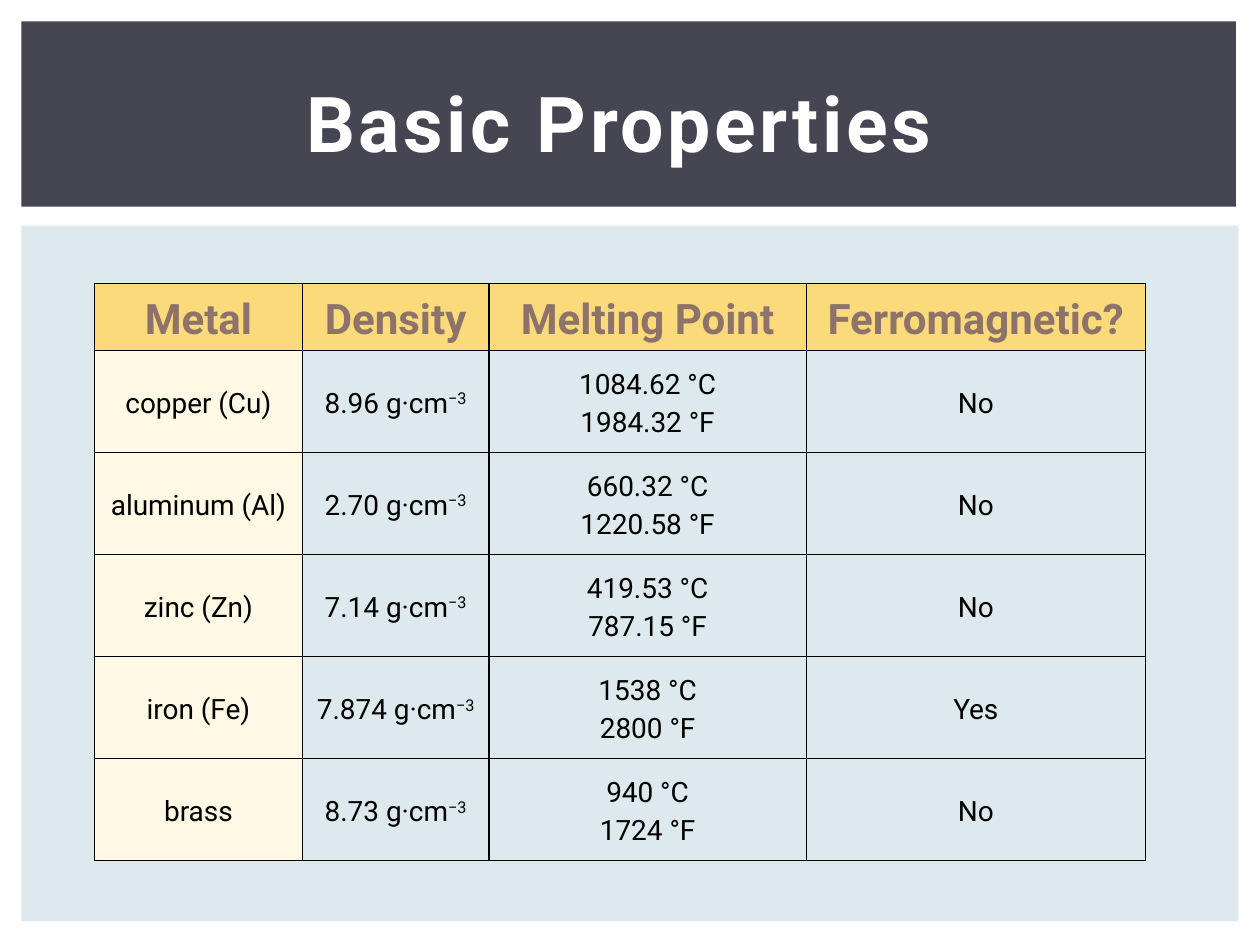
from lxml.etree import SubElement
from pptx import Presentation
from pptx.dml.color import RGBColor
from pptx.enum.shapes import MSO_SHAPE as Shape
from pptx.enum.text import MSO_ANCHOR as Anchor, PP_ALIGN as Align
from pptx.oxml.ns import qn
from pptx.util import Inches, Pt

WHITE = RGBColor(0xFF, 0xFF, 0xFF)
BLACK = RGBColor(0x00, 0x00, 0x00)
SLATE = RGBColor(0x46, 0x46, 0x53)
PALE_BLUE = RGBColor(0xDD, 0xE9, 0xEC)
YELLOW = RGBColor(0xFA, 0xDA, 0x7A)
CREAM = RGBColor(0xFE, 0xF8, 0xE4)
BROWN = RGBColor(0x8E, 0x73, 0x6A)

HEADINGS = ["Metal", "Density", "Melting Point", "Ferromagnetic?"]
METALS = [
    ("copper (Cu)", "8.96", "1084.62", "1984.32", "No"),
    ("aluminum (Al)", "2.70", "660.32", "1220.58", "No"),
    ("zinc (Zn)", "7.14", "419.53", "787.15", "No"),
    ("iron (Fe)", "7.874", "1538", "2800", "Yes"),
    ("brass", "8.73", "940", "1724", "No"),
]
COLUMN_WIDTHS = [1.65, 1.48, 2.52, 2.69]
HEADING_HEIGHT, METAL_HEIGHT = 0.53, 0.81


def add_text(paragraph, text, font="Roboto", size=16, color=BLACK,
             bold=False, spacing=0, raised=0):
    """Add a run; spacing is in points and raised is a percentage."""
    run = paragraph.add_run()
    run.text = text
    run.font.name = font
    run.font.size = Pt(size)
    run.font.color.rgb = color
    run.font.bold = bold
    properties = run.font._element
    if spacing:
        properties.set("spc", str(spacing * 100))
    if raised:
        properties.set("baseline", str(raised * 1000))


class SlideBuilder:
    def __init__(self, slide, border_color=BLACK, border_width=1):
        self.slide = slide
        self.border_color = border_color
        self.border_width = border_width

    def panel(self, left, top, width, height, color):
        panel = self.slide.shapes.add_shape(
            Shape.RECTANGLE, Inches(left), Inches(top), Inches(width), Inches(height))
        panel.shadow.inherit = False
        panel.fill.solid()
        panel.fill.fore_color.rgb = color
        panel.line.fill.background()

    def title(self, text, left, top, width, height):
        frame = self.slide.shapes.add_textbox(
            Inches(left), Inches(top), Inches(width), Inches(height)).text_frame
        frame.word_wrap = True
        frame.vertical_anchor = Anchor.MIDDLE
        heading = frame.paragraphs[0]
        heading.alignment = Align.CENTER
        add_text(heading, text, size=44, color=WHITE, bold=True, spacing=2)

    def table(self, left, top, column_widths, row_heights):
        table = self.slide.shapes.add_table(
            len(row_heights), len(column_widths), Inches(left), Inches(top),
            Inches(sum(column_widths)), Inches(sum(row_heights))).table
        table.first_row = table.horz_banding = False
        for column, width in zip(table.columns, column_widths):
            column.width = Inches(width)
        for row, height in zip(table.rows, row_heights):
            row.height = Inches(height)
        return table

    def cell(self, cell, fill=None):
        """Style a cell and return its paragraph."""
        cell.vertical_anchor = Anchor.MIDDLE
        cell.margin_left = cell.margin_right = Inches(0.07)
        cell.margin_top = cell.margin_bottom = 0
        self.borders(cell)
        if fill is None:
            cell.fill.background()
        else:
            cell.fill.solid()
            cell.fill.fore_color.rgb = fill
        paragraph = cell.text_frame.paragraphs[0]
        paragraph.alignment = Align.CENTER
        paragraph.line_spacing = 1.15
        return paragraph

    def borders(self, cell):
        properties = cell._tc.get_or_add_tcPr()
        for side in ("lnL", "lnR", "lnT", "lnB"):
            line = SubElement(properties, qn(f"a:{side}"), w=str(Pt(self.border_width)))
            fill = SubElement(line, qn("a:solidFill"))
            SubElement(fill, qn("a:srgbClr"), val=str(self.border_color))


def main():
    deck = Presentation()
    deck.slide_width, deck.slide_height = Inches(10), Inches(7.5)
    builder = SlideBuilder(deck.slides.add_slide(deck.slide_layouts[6]))

    # Background panels
    builder.panel(0.17, 1.79, 9.66, 5.52, PALE_BLUE)
    builder.panel(0.17, 0.17, 9.64, 1.47, SLATE)

    # Properties table
    row_heights = [HEADING_HEIGHT] + [METAL_HEIGHT] * len(METALS)
    properties = builder.table(0.75, 2.25, COLUMN_WIDTHS, row_heights)
    for column, heading in enumerate(HEADINGS):
        add_text(builder.cell(properties.cell(0, column), YELLOW), heading,
                 size=24, color=BROWN, bold=True)

    for row, (metal, density, celsius, fahrenheit, magnetic) in enumerate(METALS, 1):
        add_text(builder.cell(properties.cell(row, 0), CREAM), metal)

        density_text = builder.cell(properties.cell(row, 1))
        add_text(density_text, f"{density} g·cm")
        add_text(density_text, "−3", raised=30)

        melting_text = builder.cell(properties.cell(row, 2))
        add_text(melting_text, f"{celsius} °C")
        melting_text.add_line_break()
        add_text(melting_text, f"{fahrenheit} °F")

        add_text(builder.cell(properties.cell(row, 3)), magnetic)

    # Title
    builder.title("Basic Properties ", 0.42, 0.39, 9.17, 1.15)

    deck.save("out.pptx")


if __name__ == "__main__":
    main()
